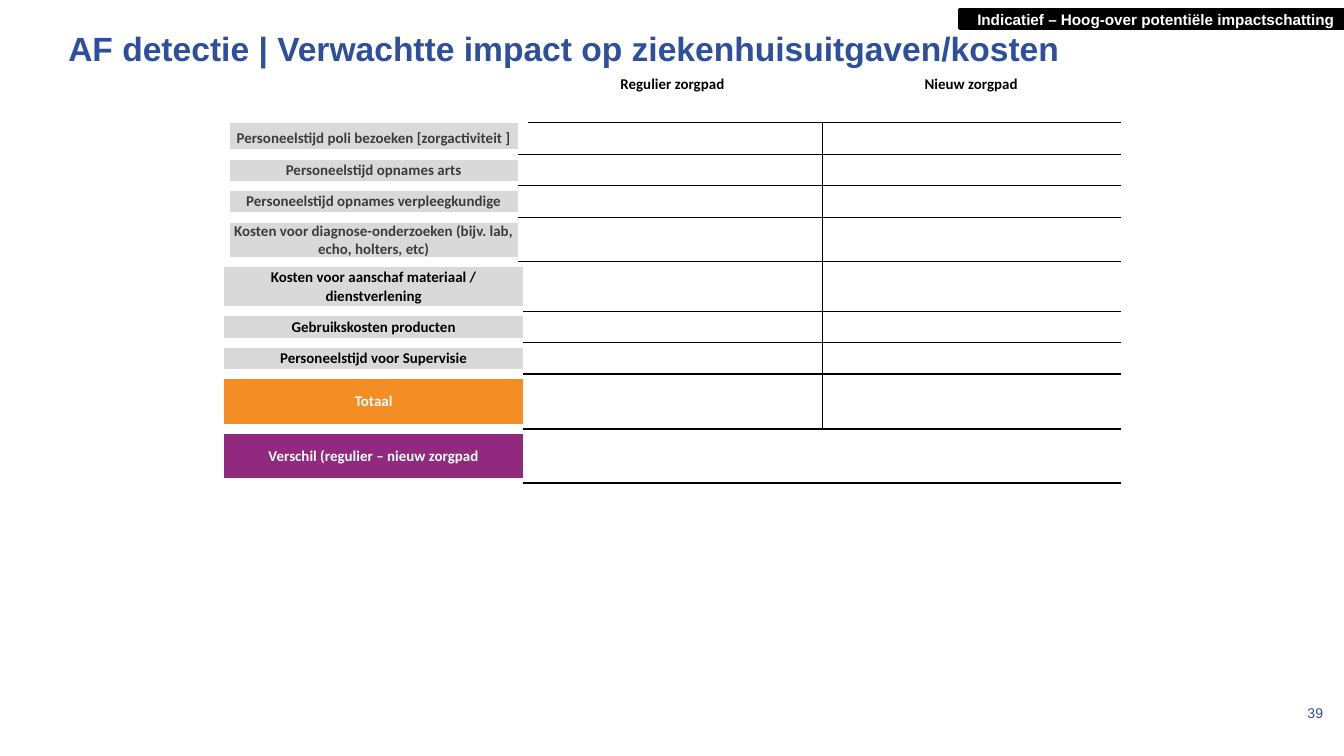
from collections import namedtuple
from dataclasses import dataclass

from lxml.etree import SubElement
from pptx import Presentation
from pptx.dml.color import RGBColor
from pptx.enum.shapes import MSO_SHAPE as Preset
from pptx.enum.text import MSO_ANCHOR as Anchor, PP_ALIGN as Align
from pptx.oxml.ns import qn
from pptx.util import Cm, Pt


@dataclass(frozen=True)
class Theme:
    blue: str = "2D4F9E"
    black: str = "000000"
    white: str = "FFFFFF"
    charcoal: str = "3C3C3C"
    grey: str = "D9D9D9"
    orange: str = "F38D24"
    purple: str = "91297F"
    heading_font: str = "Arial"
    table_font: str = "Calibri"
    title_size: float = 18
    badge_size: float = 8.2
    table_size: float = 8
    page_size: float = 7.5
    hairline: float = 0.25
    rule: float = 0.5
    strong_rule: float = 1
    gap: float = 6
    wide_gap: float = 6.3


THEME = Theme()
Box = namedtuple("Box", "left top width height")
CostRow = namedtuple("CostRow", "label height fill ink care top bottom")


def care_row(label, height):
    return CostRow(label, height, THEME.grey, THEME.charcoal, True, THEME.rule, THEME.rule)


def extra_row(label, height, bottom=THEME.rule):
    return CostRow(label, height, THEME.grey, THEME.black, False, THEME.rule, bottom)


def sum_row(label, fill):
    return CostRow(label, 1.03, fill, THEME.white, False, THEME.strong_rule, THEME.strong_rule)


HEADER_HEIGHT = 1.02
PATHWAYS = ("Regulier zorgpad", "Nieuw zorgpad")
COSTS = (
    care_row("Personeelstijd poli bezoeken [zorgactiviteit ]", 0.6),
    care_row("Personeelstijd opnames arts", 0.59),
    care_row("Personeelstijd opnames verpleegkundige", 0.6),
    care_row("Kosten voor diagnose-onderzoeken (bijv. lab, echo, holters, etc)", 0.83),
    extra_row("Kosten voor aanschaf materiaal / dienstverlening", 0.93),
    extra_row("Gebruikskosten producten", 0.6),
    extra_row("Personeelstijd voor Supervisie", 0.59, THEME.strong_rule),
    sum_row("Totaal", THEME.orange),
    sum_row("Verschil (regulier – nieuw zorgpad", THEME.purple),
)


def write(frame, text, font, size, color, bold=False, align=Align.LEFT):
    frame.text = text
    paragraph = frame.paragraphs[0]
    paragraph.alignment = align
    for run in paragraph.runs:
        run.font.name = font
        run.font.size = Pt(size)
        run.font.bold = bold
        run.font.color.rgb = RGBColor.from_string(color)
    return paragraph


def set_insets(target, across, down):
    target.margin_left = target.margin_right = Cm(across)
    target.margin_top = target.margin_bottom = Cm(down)


def finish_cell(cell, fill=None, **borders):
    properties = cell._tc.get_or_add_tcPr()
    for side in "LRTB":
        color, width = borders.get(side, (None, 0))
        line = SubElement(properties, qn(f"a:ln{side}"), w=str(Pt(width)))
        if color:
            solid = SubElement(line, qn("a:solidFill"))
            SubElement(solid, qn("a:srgbClr"), val=color)
        else:
            SubElement(line, qn("a:noFill"))
    if fill:
        cell.fill.solid()
        cell.fill.fore_color.rgb = RGBColor.from_string(fill)
    else:
        cell.fill.background()
    if not cell.text_frame.text:
        end = cell.text_frame.paragraphs[0]._p.get_or_add_endParaRPr()
        end.set("sz", str(int(THEME.table_size * 100)))


def write_cell(cell, text, color):
    write(cell.text_frame, text, THEME.table_font, THEME.table_size, color, True, Align.CENTER)


def place_title(slide, box):
    title = slide.shapes.title
    title.left, title.top, title.width, title.height = map(Cm, box)
    frame = title.text_frame
    frame.word_wrap = True
    frame.vertical_anchor = Anchor.TOP
    set_insets(frame, 0.25, 0.25)
    write(frame, "AF detectie | Verwachtte impact op ziekenhuisuitgaven/kosten",
          THEME.heading_font, THEME.title_size, THEME.blue, True)


def place_page_number(slide, box):
    page = slide.shapes.add_textbox(*map(Cm, box))
    frame = page.text_frame
    frame.word_wrap = True
    frame.vertical_anchor = Anchor.MIDDLE
    set_insets(frame, 0.25, 0.13)
    write(frame, "39", THEME.heading_font, THEME.page_size, THEME.blue)


def place_badge(slide, box):
    badge = slide.shapes.add_shape(Preset.RECTANGLE, *map(Cm, box))
    badge.shadow.inherit = False
    badge.fill.solid()
    badge.fill.fore_color.rgb = RGBColor.from_string(THEME.black)
    badge.line.color.rgb = RGBColor.from_string(THEME.black)
    badge.line.width = Pt(1.5)
    frame = badge.text_frame
    frame.word_wrap = False
    frame.vertical_anchor = Anchor.MIDDLE
    set_insets(frame, 0.18, 0.18)
    notice = write(frame, "Indicatief – Hoog-over potentiële impactschatting",
                   THEME.heading_font, THEME.badge_size, THEME.white, True, Align.RIGHT)
    notice.line_spacing = 1.06


def fill_header(cells):
    finish_cell(cells[0])
    for cell, pathway in zip(cells[1:], PATHWAYS):
        write_cell(cell, pathway, THEME.black)
        finish_cell(cell, B=(THEME.black, THEME.rule))


def fill_cost_row(cells, cost, previous):
    label, regular, new = cells
    write_cell(label, cost.label, cost.ink)
    label.vertical_anchor = Anchor.MIDDLE
    wide = (THEME.white, THEME.wide_gap)
    narrow = (THEME.white, THEME.gap)
    label_lines = {"B": wide if cost.care else narrow}
    if previous:
        label_lines["T"] = wide if previous.care else narrow
    if cost.care:
        set_insets(label, 0.18, 0.08)
        label_lines.update(L=wide, R=wide)
    finish_cell(label, cost.fill, **label_lines)

    rules = {"T": (THEME.black, cost.top), "B": (THEME.black, cost.bottom)}
    if cost is COSTS[-1]:
        regular.merge(new)
        divider = {}
    else:
        divider = {"R": (THEME.black, THEME.hairline)}
    left = {"L": wide} if cost.care else {}
    finish_cell(regular, **rules, **left, **divider)
    finish_cell(new, **rules, **{"L": line for line in divider.values()})


def place_cost_table(slide, box):
    size = (len(COSTS) + 1, len(PATHWAYS) + 1)
    table = slide.shapes.add_table(*size, *map(Cm, box)).table
    table.first_row = table.horz_banding = False
    for column in table.columns:
        column.width = Cm(box.width / size[1])
    heights = [HEADER_HEIGHT, *(cost.height for cost in COSTS)]
    for row, height in zip(table.rows, heights):
        row.height = Cm(height)
    header, *body = [list(row.cells) for row in table.rows]
    fill_header(header)
    for cells, cost, previous in zip(body, COSTS, (None, *COSTS)):
        fill_cost_row(cells, cost, previous)


def main():
    deck = Presentation()
    deck.slide_width, deck.slide_height = Cm(25.4), Cm(14.29)
    slide = deck.slides.add_slide(deck.slide_layouts[5])
    place_title(slide, Box(1.04, 0.28, 23.32, 1.27))
    place_page_number(slide, Box(24.46, 13.18, 0.99, 0.58))
    place_badge(slide, Box(18.14, 0.18, 7.26, 0.36))
    table_height = HEADER_HEIGHT + sum(cost.height for cost in COSTS)
    place_cost_table(slide, Box(4.24, 1.3, 16.94, table_height))
    deck.save("out.pptx")


if __name__ == "__main__":
    main()
